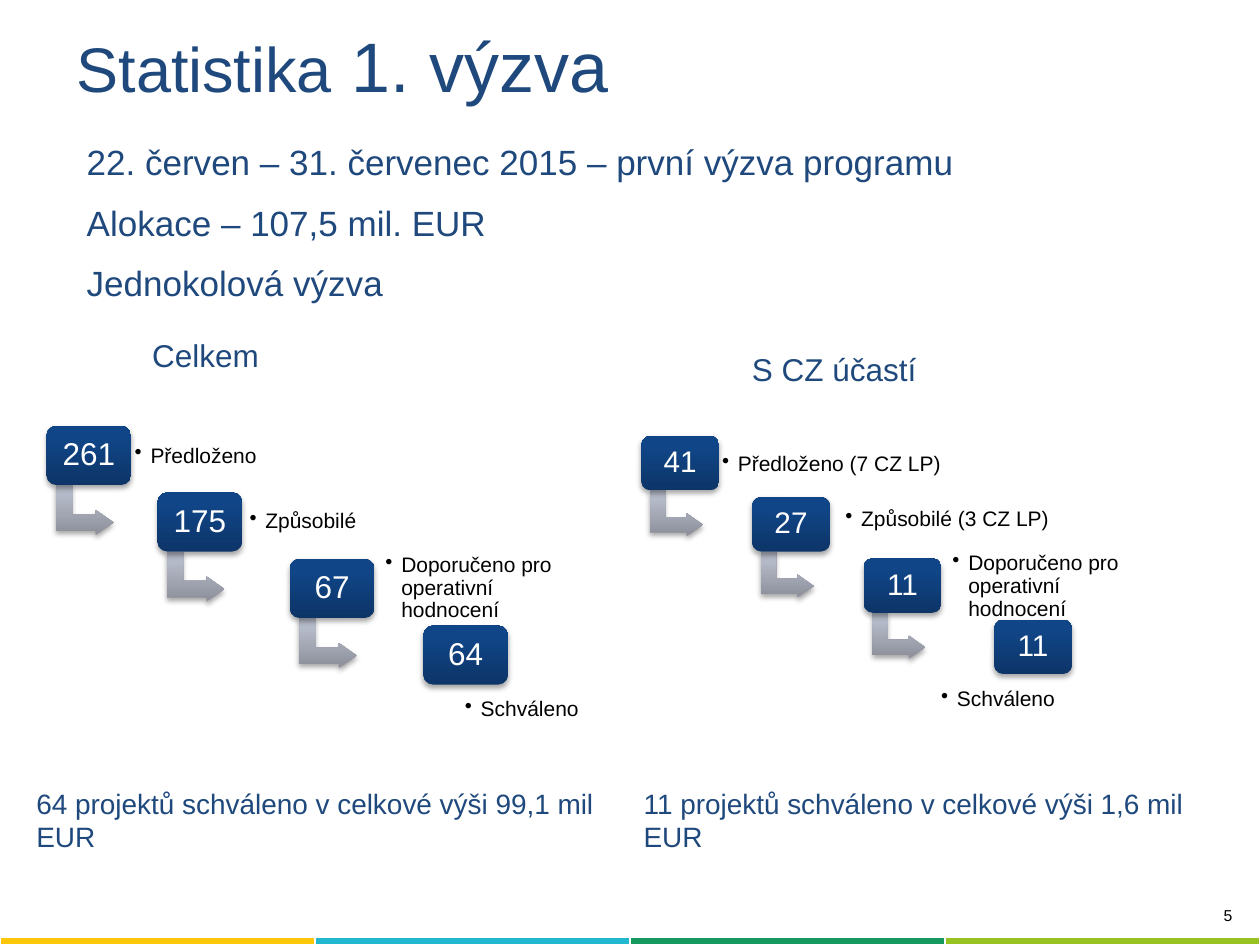
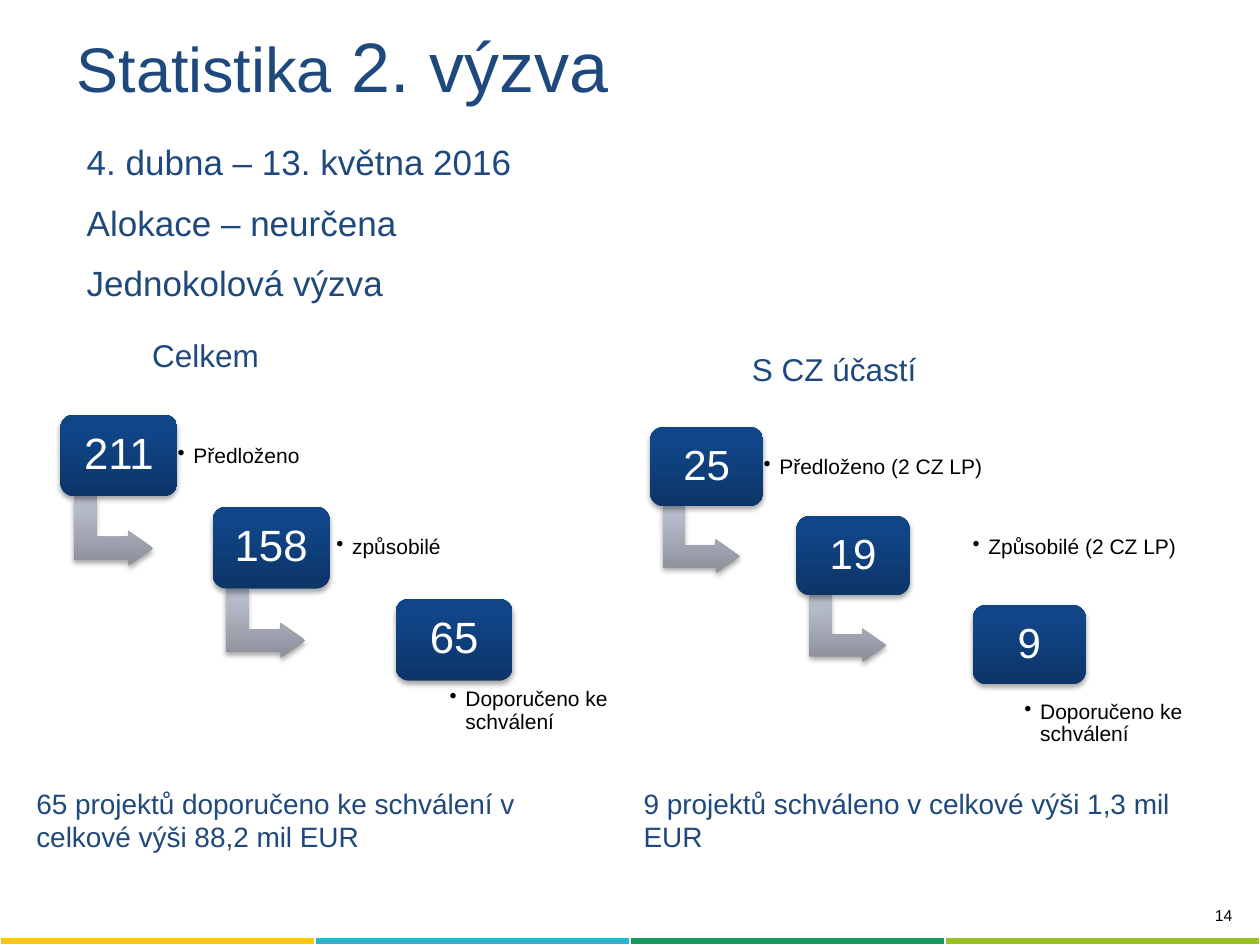
from copy import deepcopy

from pptx import Presentation
from pptx import util as u
from pptx.dml.color import RGBColor
from pptx.enum import shapes, text
from pptx.oxml import parse_xml
from pptx.oxml.ns import nsdecls, qn

Pt = u.Pt

NAVY = RGBColor(0x1F, 0x49, 0x7D)
BLACK = RGBColor(0, 0, 0)
WHITE = RGBColor(0xFF, 0xFF, 0xFF)
BAND_COLOURS = (RGBColor(0xFD, 0xC6, 0x09), RGBColor(0x21, 0xB7, 0xCF),
                RGBColor(0x15, 0x99, 0x60), RGBColor(0x98, 0xC2, 0x22))
BOX_SHADES = (RGBColor(0x0D, 0x35, 0x68), RGBColor(0x10, 0x45, 0x87),
              RGBColor(0x0E, 0x45, 0x8A))
ARROW_SHADES = (RGBColor(0x8C, 0x8F, 0x9A), RGBColor(0xB5, 0xBA, 0xC8),
                RGBColor(0xB6, 0xBB, 0xC9))
SHADE_STOPS = (0, 0.8, 1)

FONT = "Arial"
PAGE_WIDTH, PAGE_HEIGHT = 720, 540

# Proportions of a step, relative to the height of its box
BOX_WIDTH, STEP_PITCH, LABEL_HEIGHT = 1.43, 1.125, 0.81
ARROW_LEFT, ARROW_TOP = 0.225, 0.937
ARROW_WIDTH, ARROW_HEIGHT = 0.845, 0.97
ARROW_ADJUSTMENTS = (0.328, 0.25, 0.358)

SHADOW = (f'<a:outerShdw {nsdecls("a")} blurRad="39400" dist="22900" dir="5400000" '
          'rotWithShape="0"><a:srgbClr val="000000"><a:alpha val="35000"/>'
          '</a:srgbClr></a:outerShdw>')


class Deck:
    """Holds the shared style and the page being built."""

    def __init__(self):
        self.file = Presentation()
        self.file.slide_width = Pt(PAGE_WIDTH)
        self.file.slide_height = Pt(PAGE_HEIGHT)
        self.page = None

    def new_page(self, number):
        self.page = self.file.slides.add_slide(self.file.slide_layouts[6])
        self.band()
        self.text(569.5, 514.1, 141.8, 22.3, [number], 9, BLACK,
                  align=text.PP_ALIGN.RIGHT)

    def style(self, para, size, colour):
        para.font.name = FONT
        para.font.size = Pt(size)
        para.font.color.rgb = colour

    def text(self, left, top, width, height, lines, size, colour=NAVY,
             align=None, gap=0, wrap=True):
        box = self.page.shapes.add_textbox(Pt(left), Pt(top), Pt(width), Pt(height))
        frame = box.text_frame
        frame.word_wrap = wrap
        for index, line in enumerate(lines):
            para = frame.add_paragraph() if index else frame.paragraphs[0]
            para.text = line
            para.alignment = align
            if index and gap:
                para.space_before = Pt(gap)
            self.style(para, size, colour)
        return box

    def title(self, word, rest):
        box = self.text(36.7, 15.1, 612, 43.9, [word], 36)
        box.text_frame.vertical_anchor = text.MSO_ANCHOR.MIDDLE
        span = box.text_frame.paragraphs[0].add_run()
        span.text = rest
        span.font.size = Pt(40)

    def band(self):
        columns = len(BAND_COLOURS)
        table = self.page.shapes.add_table(
            1, columns, 0, Pt(535.7), Pt(PAGE_WIDTH), Pt(4.3)).table
        for cell, colour in zip(table.rows[0].cells, BAND_COLOURS):
            cell.fill.solid()
            cell.fill.fore_color.rgb = colour
            cell.margin_top = cell.margin_bottom = 0
            cell.text_frame.paragraphs[0].font.size = Pt(2)

    def shaded(self, kind, left, top, width, height, shades):
        """Preset shape with a vertical gradient and a soft shadow."""
        shape = self.page.shapes.add_shape(
            kind, Pt(left), Pt(top), Pt(width), Pt(height))
        shape.line.fill.background()
        shape.fill.gradient()
        shape.fill.gradient_angle = 90
        properties = shape._element.spPr
        gradient = properties.find(qn("a:gradFill"))
        gradient.set("rotWithShape", "0")
        stop_list = gradient.find(qn("a:gsLst"))
        stop_list.append(deepcopy(stop_list[0]))
        for stop, position, shade in zip(shape.fill.gradient_stops, SHADE_STOPS, shades):
            stop.position = position
            stop.color.rgb = shade
        shape.shadow.inherit = False
        properties.find(qn("a:effectLst")).append(parse_xml(SHADOW))
        return shape

    def arrow(self, left, top, unit):
        arrow = self.shaded(shapes.MSO_SHAPE.BENT_UP_ARROW,
                            left + ARROW_LEFT * unit, top + ARROW_TOP * unit,
                            ARROW_WIDTH * unit, ARROW_HEIGHT * unit, ARROW_SHADES)
        arrow.rotation = 90
        for index, value in enumerate(ARROW_ADJUSTMENTS):
            arrow.adjustments[index] = value

    def number_box(self, left, top, unit, number, size):
        box = self.shaded(shapes.MSO_SHAPE.ROUNDED_RECTANGLE, left, top,
                          BOX_WIDTH * unit, unit, BOX_SHADES)
        frame = box.text_frame
        frame.word_wrap = False
        frame.vertical_anchor = text.MSO_ANCHOR.MIDDLE
        para = frame.paragraphs[0]
        para.text = number
        para.alignment = text.PP_ALIGN.CENTER
        para.line_spacing = 0.9
        self.style(para, size, WHITE)

    def label(self, left, top, width, height, line):
        box = self.page.shapes.add_textbox(Pt(left), Pt(top), Pt(width), Pt(height))
        frame = box.text_frame
        frame.word_wrap = True
        frame.vertical_anchor = text.MSO_ANCHOR.MIDDLE
        frame.margin_left = frame.margin_right = Pt(3.6)
        para = frame.paragraphs[0]
        para.text = line
        para.line_spacing = 0.9
        settings = para._p.get_or_add_pPr()
        settings.set("marL", str(Pt(9)))
        settings.set("indent", str(-Pt(9)))
        settings.append(parse_xml(f'<a:buChar {nsdecls("a")} char="•"/>'))
        self.style(para, 12, BLACK)

    def step_down(self, top, unit, size, steps):
        """Staircase of numbers; each step is (left, number, label, label place)."""
        for index, (left, number, line, place) in enumerate(steps):
            step_top = top + index * STEP_PITCH * unit
            if index < len(steps) - 1:
                self.arrow(left, step_top, unit)
            self.number_box(left, step_top, unit, number, size)
            self.label(*place, LABEL_HEIGHT * unit, line)

    def call_page(self, page_number, call, facts, flows, totals):
        self.new_page(page_number)
        self.title("Statistika", f" {call}. výzva")
        self.text(42.5, 77, 612, 121, facts, 20, gap=10.4)
        for flow in flows:
            self.step_down(*flow)
        self.text(79.9, 188.6, 76.3, 28.8, ["Celkem"], 18, wrap=False)
        self.text(422.6, 196.6, 114.5, 28.8, ["S CZ účastí"], 18, wrap=False)
        for left, total in zip((13.7, 360.7), totals):
            self.text(left, 445.7, 335.5, 46.1, [total], 16)


def main():
    deck = Deck()

    # First call
    deck.call_page(
        "5", 1,
        ["22. červen – 31. červenec 2015 – první výzva programu",
         "Alokace – 107,5 mil. EUR", "Jednokolová výzva"],
        [(243.4, 33.8, 18, [
            (26.6, "261", "Předloženo", (73.4, 247, 157.7)),
            (90, "175", "Způsobilé", (139, 284.4, 109.4)),
            (165.6, "67", "Doporučeno pro operativní hodnocení", (216.7, 322.6, 122.4)),
            (241.9, "64", "Schváleno", (262.1, 391.7, 92.2))]),
         (249.1, 31.1, 17, [
            (366.5, "41", "Předloženo (7 CZ LP)", (409, 252.7, 144.7)),
            (429.8, "27", "Způsobilé (3 CZ LP)", (479.5, 284.4, 132.5)),
            (493.5, "11", "Doporučeno pro operativní hodnocení", (540.7, 322.6, 112.3)),
            (568.1, "11", "Schváleno", (534.2, 387.4, 131))])],
        ["64 projektů schváleno v celkové výši 99,1 mil EUR",
         "11 projektů schváleno v celkové výši 1,6 mil EUR"])

    # Second call
    deck.call_page(
        "14", 2,
        ["4. dubna – 13. května 2016", "Alokace – neurčena", "Jednokolová výzva"],
        [(244.1, 45.2, 24, [
            (371.5, "25", "Předloženo (2 CZ LP)", (432.7, 249.1, 210.2)),
            (455.2, "19", "Způsobilé (2 CZ LP)", (552.2, 294.5, 142.6)),
            (555.9, "9", "Doporučeno ke schválení", (581.8, 395.3, 103))]),
         (236.9, 46.8, 25, [
            (34.5, "211", "Předloženo", (97.9, 241.9, 217.4)),
            (121.5, "158", "způsobilé", (188.6, 293.8, 150.5)),
            (226, "65", "Doporučeno ke schválení", (253.4, 387.4, 127.4))])],
        ["65 projektů doporučeno ke schválení v celkové výši 88,2 mil EUR",
         "9 projektů schváleno v celkové výši 1,3 mil EUR"])

    deck.file.save("out.pptx")


if __name__ == "__main__":
    main()
